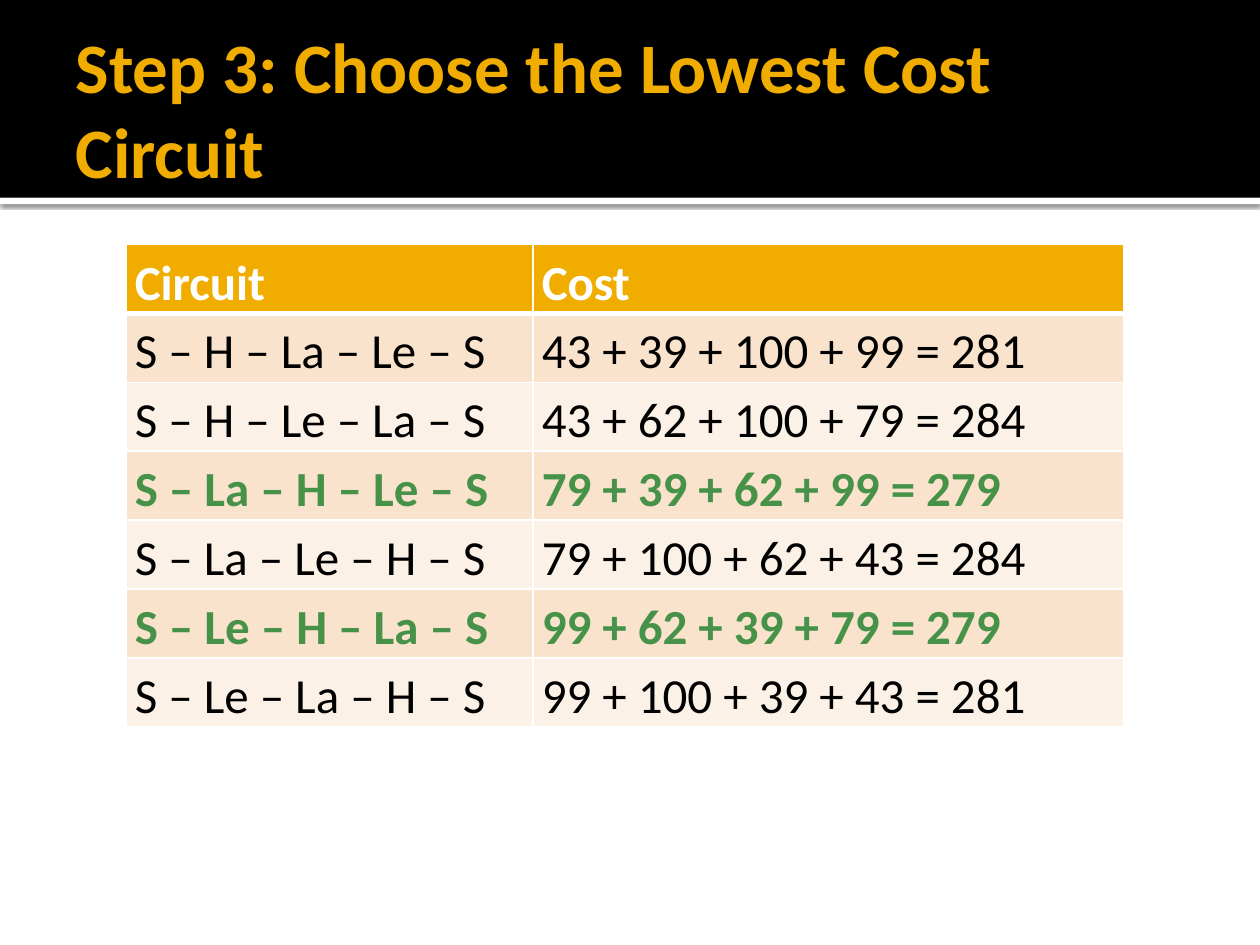
from typing import NamedTuple

from lxml.etree import SubElement
from pptx import Presentation
from pptx.dml.color import RGBColor
from pptx.enum.shapes import MSO_SHAPE
from pptx.enum.text import MSO_ANCHOR, PP_ALIGN
from pptx.oxml import parse_xml
from pptx.oxml.ns import nsdecls, qn
from pptx.util import Inches, Pt

COLORS = {
    "black": "000000",
    "white": "FFFFFF",
    "gold": "F0AD00",
    "green": "479249",
    "band_dark": "F9E3CC",
    "band_light": "FCF1E7",
}
FONT = "Calibri"


class Circuit(NamedTuple):
    route: str
    cost: str
    lowest: bool = False


CIRCUITS = [
    Circuit("S – H – La – Le – S", "43 + 39 + 100 + 99 = 281"),
    Circuit("S – H – Le – La – S", "43 + 62 + 100 + 79 = 284"),
    Circuit("S – La – H – Le – S", "79 + 39 + 62 + 99 = 279", True),
    Circuit("S – La – Le – H – S", "79 + 100 + 62 + 43 = 284"),
    Circuit("S – Le – H – La – S", "99 + 62 + 39 + 79 = 279", True),
    Circuit("S – Le – La – H – S", "99 + 100 + 39 + 43 = 281"),
]


def rgb(name: str) -> RGBColor:
    return RGBColor.from_string(COLORS[name])


def style_font(paragraph, size: float, color: str, bold: bool) -> None:
    font = paragraph.font
    font.name, font.size, font.bold = FONT, Pt(size), bold
    font.color.rgb = rgb(color)


def add_band(page, top: float, height: float, color: str):
    """Draw a plain rectangle across the whole page."""
    band = page.shapes.add_shape(
        MSO_SHAPE.RECTANGLE, 0, Inches(top), Inches(10), Inches(height))
    band.shadow.inherit = False
    band.fill.solid()
    band.fill.fore_color.rgb = rgb(color)
    band.line.fill.background()
    return band


def add_shadow(shape) -> None:
    effects = shape.element.spPr.find(qn("a:effectLst"))
    shadow = SubElement(effects, qn("a:outerShdw"), blurRad=str(Pt(2.5)),
                        dist=str(Pt(0.8)), dir="5400000", rotWithShape="0")
    color = SubElement(shadow, qn("a:srgbClr"), val=COLORS["black"])
    SubElement(color, qn("a:alpha"), val="60000")


def set_borders(cell, widths: dict[str, float]) -> None:
    properties = cell._tc.get_or_add_tcPr()
    for position, (side, width) in enumerate(widths.items()):
        properties.insert(position, parse_xml(
            f'<a:ln{side} {nsdecls("a")} w="{Pt(width)}"><a:solidFill>'
            f'<a:srgbClr val="{COLORS["white"]}"/></a:solidFill></a:ln{side}>'))


def fill_row(table, row: int, circuit: Circuit, fill: str, color: str,
             bold: bool) -> None:
    widths = {"L": 1, "R": 1, "T": 3 if row == 1 else 1, "B": 3 if row == 0 else 1}
    for column, text in enumerate((circuit.route, circuit.cost)):
        cell = table.cell(row, column)
        cell.margin_left = cell.margin_right = Inches(0.07)
        cell.margin_top = cell.margin_bottom = 0
        cell.fill.solid()
        cell.fill.fore_color.rgb = rgb(fill)
        set_borders(cell, widths)
        cell.text = text
        para = cell.text_frame.paragraphs[0]
        para.line_spacing = 1.15
        style_font(para, 28, color, bold)


def main() -> None:
    deck = Presentation()
    deck.slide_width, deck.slide_height = Inches(10), Inches(7.5)
    page = deck.slides.add_slide(deck.slide_layouts[5])

    # Header: white rule with a shadow, then the black band
    add_shadow(add_band(page, 1.57, 0.05, "white"))
    header = add_band(page, 0, 1.57, "black")

    # Title, placed in front of the header
    title = page.shapes.title
    header.element.addnext(title.element)
    title.left, title.top = Inches(0.5), Inches(0.17)
    title.width, title.height = Inches(9), Inches(1.37)
    frame = title.text_frame
    frame.text = "Step 3: Choose the Lowest Cost Circuit"
    frame.word_wrap = True
    frame.vertical_anchor = MSO_ANCHOR.MIDDLE
    frame.margin_left = Inches(0.1)
    frame.margin_right = frame.margin_top = frame.margin_bottom = Inches(0.05)
    frame.paragraphs[0].alignment = PP_ALIGN.LEFT
    style_font(frame.paragraphs[0], 40.5, "gold", True)

    # Cost table, with the cheapest circuits in green
    table = page.shapes.add_table(
        len(CIRCUITS) + 1, 2, Inches(1), Inches(1.94), Inches(7.92), Inches(3.76)).table
    table.columns[0].width, table.columns[1].width = Inches(3.23), Inches(4.69)
    fill_row(table, 0, Circuit("Circuit", "Cost"), "gold", "white", True)
    for row, circuit in enumerate(CIRCUITS, start=1):
        fill_row(table, row, circuit, "band_dark" if row % 2 else "band_light",
                 "green" if circuit.lowest else "black", circuit.lowest)

    deck.save("out.pptx")


if __name__ == "__main__":
    main()
